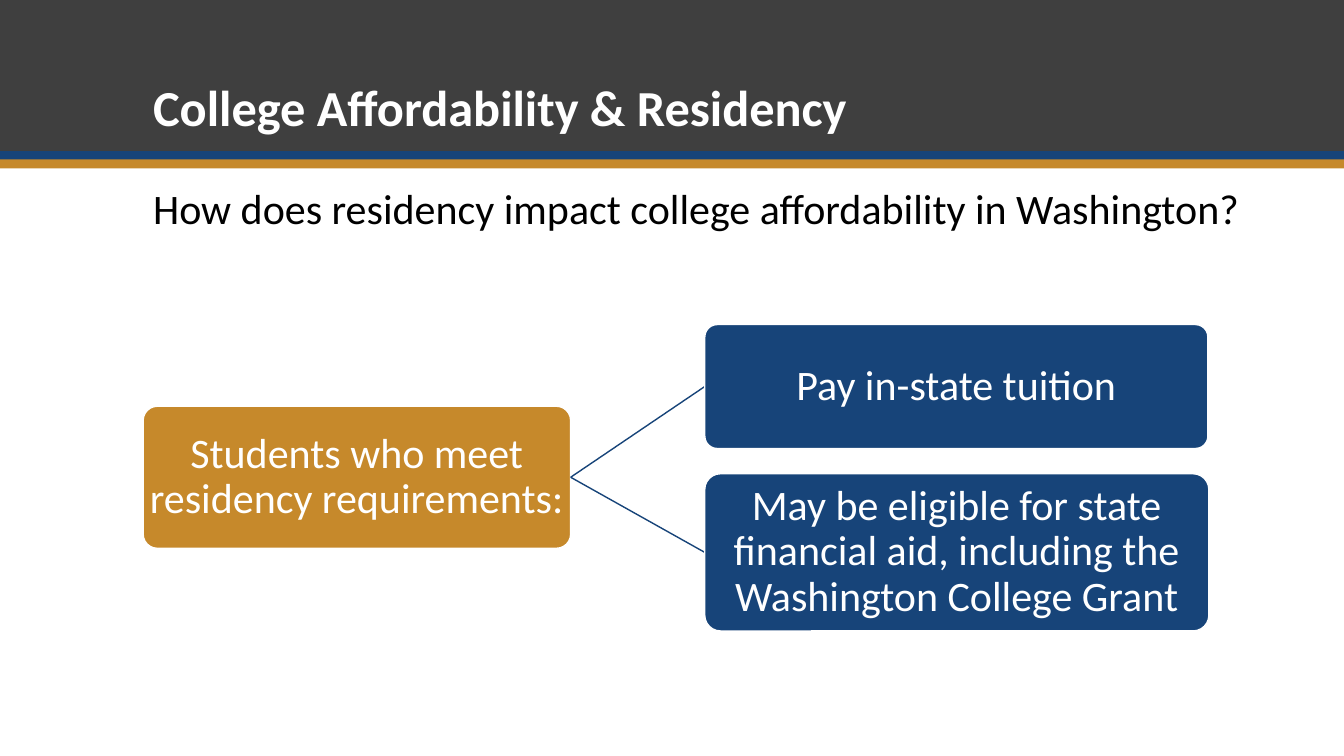
from pptx import Presentation
from pptx.dml.color import RGBColor
from pptx.enum.shapes import MSO_CONNECTOR as Conn, MSO_SHAPE as Kind
from pptx.enum.text import MSO_ANCHOR as Anchor, PP_ALIGN as Align
from pptx.oxml.xmlchemy import OxmlElement as Node
from pptx.util import Inches, Pt

WHITE = RGBColor(0xFF, 0xFF, 0xFF)
BLACK = RGBColor(0x00, 0x00, 0x00)
GREY = RGBColor(0x3F, 0x3F, 0x3F)
BLUE = RGBColor(0x17, 0x44, 0x79)
GOLD = RGBColor(0xC6, 0x89, 0x2B)


class Page:
    """Holds the text style and the current slide."""

    def __init__(self, slide):
        self.shapes = slide.shapes
        self.style = {"name": "Calibri", "size": Pt(30), "bold": False}

    def label(self, frame, text, color, anchor, align, **extra):
        frame.word_wrap = True
        frame.vertical_anchor = anchor
        para = frame.paragraphs[0]
        para.alignment = align
        para.line_spacing = 0.9
        run = para.add_run()
        run.text = text
        for key, value in {**self.style, **extra}.items():
            setattr(run.font, key, value)
        run.font.color.rgb = color

    def block(self, kind, box, fill):
        shape = self.shapes.add_shape(kind, *map(Inches, box))
        shape.shadow.inherit = False
        shape.fill.solid()
        shape.fill.fore_color.rgb = fill
        shape.line.fill.background()
        return shape

    def band(self, top, height, fill):
        self.block(Kind.RECTANGLE, (0, top, 13.33, height), fill)

    def text(self, box, text, color, anchor, **extra):
        area = self.shapes.add_textbox(*map(Inches, box))
        self.label(area.text_frame, text, color, anchor, Align.LEFT, **extra)

    def card(self, box, text, fill):
        shape = self.block(Kind.ROUNDED_RECTANGLE, box, fill)
        shape.adjustments[0] = 0.1
        shape.line.color.rgb = WHITE
        shape.line.width = Pt(1)
        frame = shape.text_frame
        for side in ("left", "right", "top", "bottom"):
            setattr(frame, f"margin_{side}", Inches(0.02))
        self.label(frame, text, WHITE, Anchor.MIDDLE, Align.CENTER)

    def link(self, start, end):
        line = self.shapes.add_connector(Conn.STRAIGHT, *map(Inches, start + end))
        line.line.color.rgb = BLUE
        line.line.width = Pt(1)
        line._element.spPr.append(Node("a:effectLst"))


def main():
    deck = Presentation()
    deck.slide_width, deck.slide_height = Inches(13.33), Inches(7.5)
    page = Page(deck.slides.add_slide(deck.slide_layouts[6]))

    # Header bands
    for top, height, fill in ((0, 1.5, GREY), (1.5, 0.09, BLUE), (1.58, 0.09, GOLD)):
        page.band(top, height, fill)

    # Title and question
    page.text((1.42, 0.28, 10.5, 1.13), "College Affordability & Residency",
              WHITE, Anchor.BOTTOM, size=Pt(36), bold=True)
    page.text((1.42, 1.72, 11.92, 0.74),
              "How does residency impact college affordability in Washington?",
              BLACK, Anchor.MIDDLE)

    # Root card
    left, top, width, height = root = (1.42, 4.03, 4.24, 1.41)
    page.card(root, "Students who meet residency requirements:", GOLD)
    start = (left + width, top + height / 2)

    # Benefits, each linked to the root
    benefits = (
        ((6.99, 3.22, 4.99, 1.23), "Pay in-state tuition"),
        ((6.99, 4.7, 5, 1.56), "May be eligible for state financial aid, "
                               "including the Washington College Grant"),
    )
    for box, text in benefits:
        page.link(start, (box[0], box[1] + box[3] / 2))
        page.card(box, text, BLUE)

    deck.save("out.pptx")


if __name__ == "__main__":
    main()
